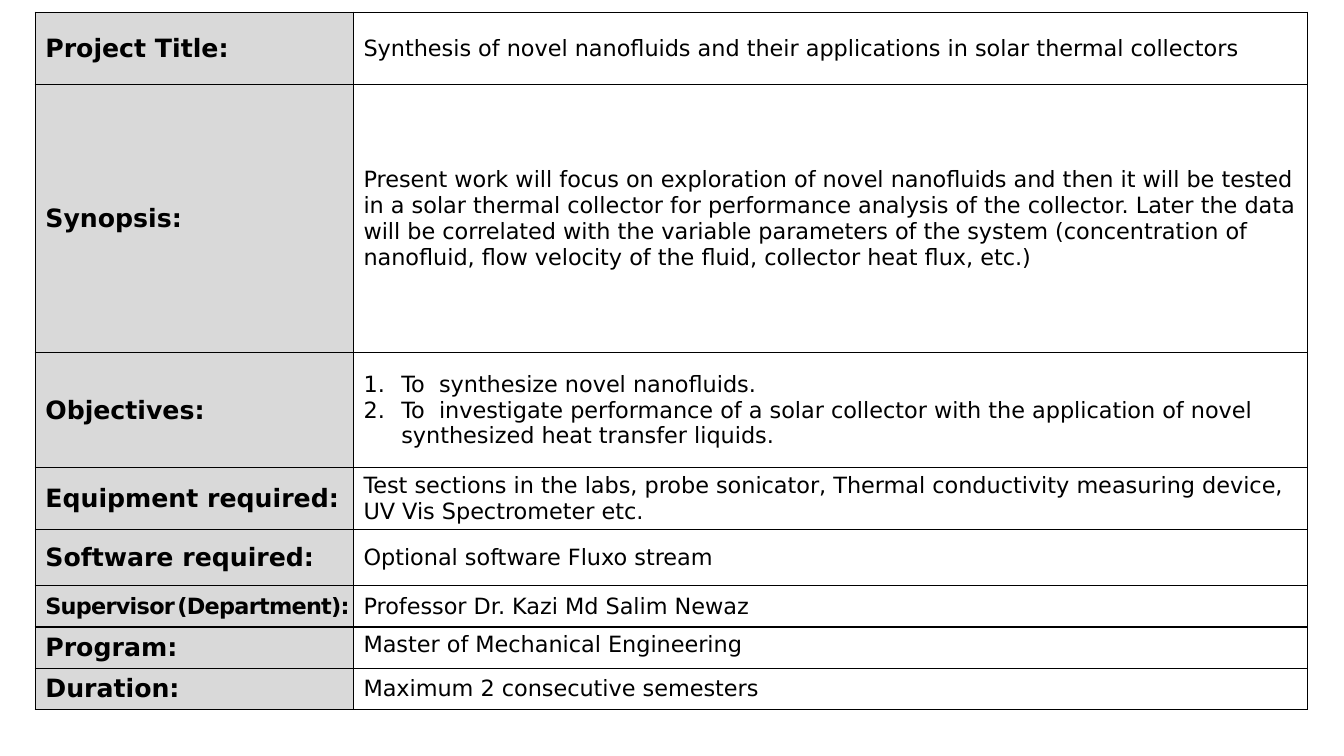
from lxml import etree
from pptx import Presentation
from pptx.dml.color import RGBColor
from pptx.enum import text
from pptx.oxml import ns
from pptx.util import Pt

FONT = "DejaVu Sans"
INK, GREY = "000000", "D9D9D9"
COLS = (227.3, 681.3)
INDENT = 27

# label, height in points, lines of content
ROWS = [
    ("Project Title:", 51.8, [
        "Synthesis of novel nanofluids and their applications in solar "
        "thermal collectors"]),
    ("Synopsis:", 191.5, [
        "Present work will focus on exploration of novel nanofluids and then "
        "it will be tested in a solar thermal collector for performance "
        "analysis of the collector. Later the data will be correlated with "
        "the variable parameters of the system (concentration of nanofluid, "
        "flow velocity of the fluid, collector heat flux, etc.)"]),
    ("Objectives:", 82.1, [
        "To  synthesize novel nanofluids.",
        "To  investigate performance of a solar collector with the "
        "application of novel synthesized heat transfer liquids."]),
    ("Equipment required:", 44.3, [
        "Test sections in the labs, probe sonicator, Thermal conductivity "
        "measuring device, UV Vis Spectrometer etc."]),
    ("Software required:", 40, ["Optional software Fluxo stream"]),
    ("Supervisor (Department):", 29.4, ["Professor Dr. Kazi Md Salim Newaz"]),
    ("Program:", 29.4, ["Master of Mechanical Engineering"]),
    ("Duration:", 29.4, ["Maximum 2 consecutive semesters"]),
]


def color(code):
    return RGBColor.from_string(code)


def style(par, size, bold=False):
    font = par.font
    font.name, font.size, font.bold = FONT, Pt(size), bold
    font.color.rgb = color(INK)


def border(cell):
    props = cell._tc.get_or_add_tcPr()
    for i, side in enumerate("LRTB"):
        line = etree.Element(ns.qn("a:ln" + side), w=str(Pt(1)))
        fill = etree.SubElement(line, ns.qn("a:solidFill"))
        etree.SubElement(fill, ns.qn("a:srgbClr"), val=INK)
        props.insert(i, line)


def number(par):
    props = par._p.get_or_add_pPr()
    props.set("marL", str(Pt(INDENT)))
    props.set("indent", str(-Pt(INDENT)))
    mark = etree.Element(ns.qn("a:buAutoNum"), type="arabicPeriod")
    props.insert(0, mark)


def squeeze(cell, label):
    """Fit a long label on one line with tight letters and a thin space."""
    cell.margin_right = 0
    par = cell.text_frame.paragraphs[0]
    first, space, last = label.partition(" ")
    for part in (first, space, last):
        run = par.add_run()
        run.text = part
        run._r.get_or_add_rPr().set("spc", "-50")
        if part == space:
            run.font.size = Pt(5)
    style(par, 16, True)


def head(cell, label):
    cell.fill.solid()
    cell.fill.fore_color.rgb = color(GREY)
    if label.startswith("Supervisor"):
        squeeze(cell, label)
    else:
        cell.text = label
        style(cell.text_frame.paragraphs[0], 18, True)


def body(cell, lines):
    cell.fill.background()
    cell.text = "\n".join(lines)
    for par in cell.text_frame.paragraphs:
        style(par, 16)
        if len(lines) > 1:
            number(par)


def form(slide):
    high = sum(row[1] for row in ROWS)
    frame = slide.shapes.add_table(len(ROWS), len(COLS), Pt(25.2), Pt(8.8),
                                   Pt(sum(COLS)), Pt(high))
    table = frame.table
    table.first_row = table.horz_banding = False
    for col, width in zip(table.columns, COLS):
        col.width = Pt(width)
    for row, (label, height, lines) in zip(table.rows, ROWS):
        row.height = Pt(height)
        left, right = row.cells
        head(left, label)
        body(right, lines)
        for cell in (left, right):
            cell.vertical_anchor = text.MSO_ANCHOR.MIDDLE
            border(cell)
        if label == "Program:":
            right.vertical_anchor = text.MSO_ANCHOR.TOP


def main():
    deck = Presentation()
    deck.slide_width, deck.slide_height = Pt(960), Pt(540)
    form(deck.slides.add_slide(deck.slide_layouts[6]))
    deck.save("out.pptx")


if __name__ == "__main__":
    main()
